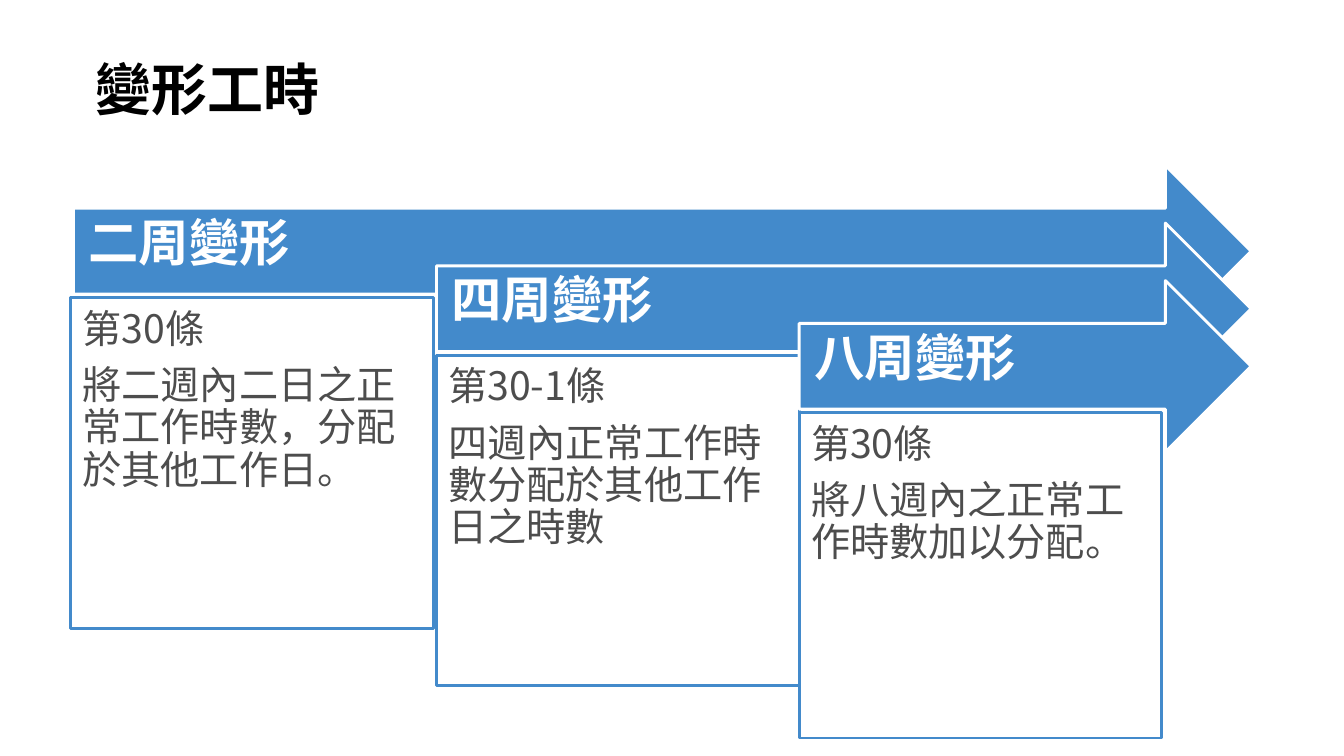
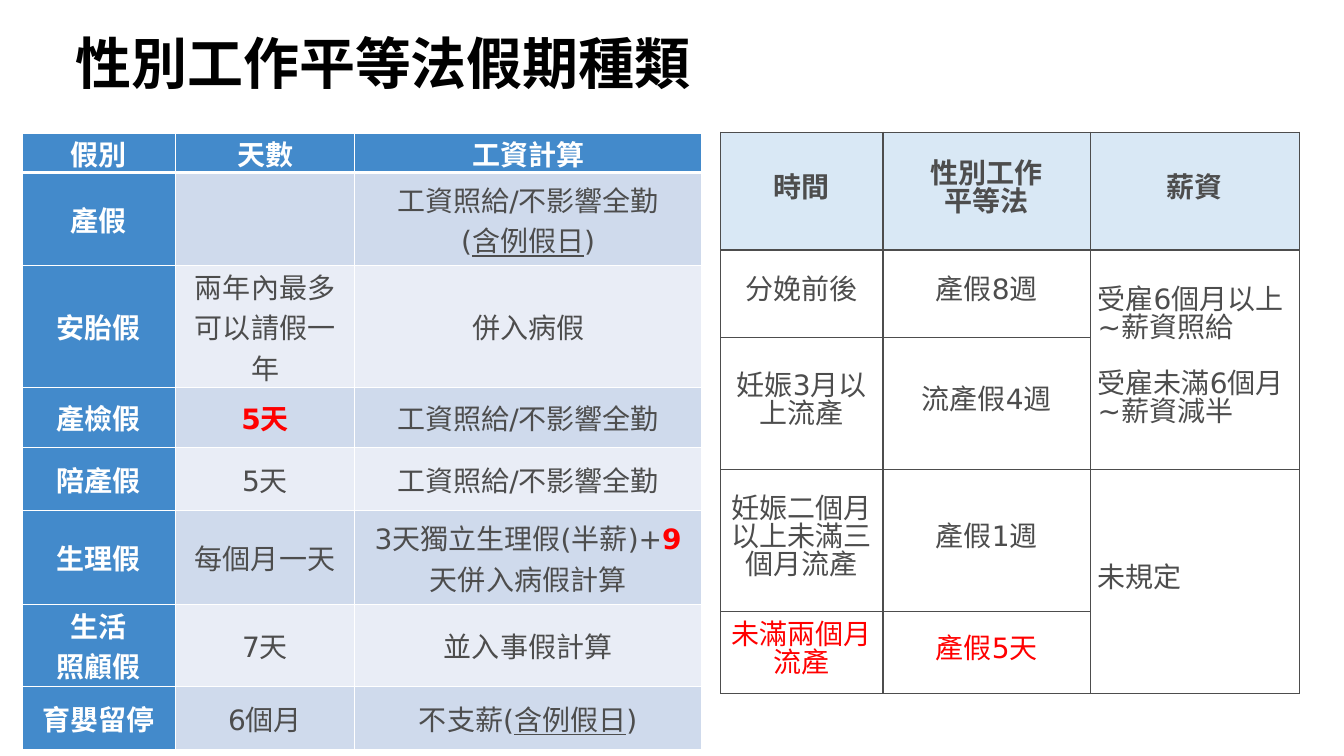
import dataclasses
import typing

import lxml.etree
import pptx
import pptx.dml.color
import pptx.enum.shapes
import pptx.enum.text
import pptx.oxml.ns
import pptx.util

Cm = pptx.util.Cm
Pt = pptx.util.Pt
Color = pptx.dml.color.RGBColor
Align = pptx.enum.text.PP_ALIGN
Anchor = pptx.enum.text.MSO_ANCHOR
Shape = pptx.enum.shapes.MSO_SHAPE
qn = pptx.oxml.ns.qn

BLACK = Color(0x00, 0x00, 0x00)
WHITE = Color(0xFF, 0xFF, 0xFF)
GRAY = Color(0x4D, 0x4D, 0x4D)
RED = Color(0xFF, 0x00, 0x00)
BLUE = Color(0x43, 0x8A, 0xCB)
PALE_BLUE = Color(0xD9, 0xE8, 0xF5)
BAND_DARK = Color(0xCF, 0xDA, 0xEC)
BAND_LIGHT = Color(0xE9, 0xED, 0xF6)
CJK_FONT = "Noto Sans CJK SC"
TABLE_FONT = "DejaVu Sans"


@dataclasses.dataclass(frozen=True)
class Style:
    size: int
    color: Color
    bold: bool = False
    font: str = CJK_FONT
    align: Align = Align.LEFT
    line_spacing: typing.Any = None
    gap: float = 0


class Span(typing.NamedTuple):
    text: str
    underline: bool = False


class Emphasis(typing.NamedTuple):
    text: str
    underline: bool = False


class Stage(typing.NamedTuple):
    name: str
    article: str
    rule: str
    arrow_left: float
    panel_left: float
    panel_height: float


TITLE = Style(40, BLACK, True)
ARROW = Style(36, WHITE, True, line_spacing=0.9)
PANEL = Style(28, GRAY, line_spacing=0.9, gap=9.8)
LEAVE_BODY = Style(20, GRAY, font=TABLE_FONT, align=Align.CENTER)
LEAVE_HEAD = dataclasses.replace(LEAVE_BODY, color=WHITE, bold=True)
LEAVE_ALERT = dataclasses.replace(LEAVE_BODY, color=RED, bold=True)
BIRTH_BODY = dataclasses.replace(LEAVE_BODY, line_spacing=Pt(20))
BIRTH_HEAD = dataclasses.replace(BIRTH_BODY, bold=True)
BIRTH_ALERT = dataclasses.replace(BIRTH_BODY, color=RED)
BIRTH_PAY = dataclasses.replace(BIRTH_BODY, align=Align.LEFT, gap=20)

STAGES = (
    Stage("二周變形", "第30條", "將二週內二日之正常工作時數，分配於其他工作日。", 1.85, 1.78, 8.33),
    Stage("四周變形", "第30-1條", "四週內正常工作時數分配於其他工作日之時數", 11, 11, 8.33),
    Stage("八周變形", "第30條", "將八週內之正常工作時數加以分配。", 20.14, 20.14, 8.2),
)
ARROW_TOP, ARROW_HEIGHT, ARROW_RIGHT = 4.17, 4.32, 31.53
STAGE_STEP, PANEL_DROP, PANEL_WIDTH = 1.45, 3.33, 9.14

FULL_PAY = "工資照給/不影響全勤"
HOLIDAYS = Span("含例假日", True)
LEAVES = (
    (["假別"], ["天數"], ["工資計算"]),
    (["產假"], [], [FULL_PAY, (Span("("), HOLIDAYS, Span(")"))]),
    (["安胎假"], ["兩年內最多可以請假一年"], ["併入病假"]),
    (["產檢假"], ["5天"], [FULL_PAY]),
    (["陪產假"], ["5天"], [FULL_PAY]),
    (["生理假"], ["每個月一天"],
     [(Span("3天獨立生理假(半薪)+"), Emphasis("9"), Span("天併入病假計算"))]),
    (["生活", "照顧假"], ["7天"], ["並入事假計算"]),
    (["育嬰留停"], ["6個月"], [(Span("不支薪("), HOLIDAYS, Span(")"))]),
)
LEAVE_COLUMNS = (3.86, 4.52, 8.74)
LEAVE_ROWS = (1, 2.34, 3.08, 1.5, 1.6, 2.36, 2.06, 1.6)
EXAM_ROW = 3

BIRTHS = (
    (["時間"], ["性別工作", "平等法"], ["薪資"]),
    (["分娩前後"], ["產假8週"], ["受雇6個月以上~薪資照給", "受雇未滿6個月~薪資減半"]),
    (["妊娠3月以上流產"], ["流產假4週"], []),
    (["妊娠二個月以上未滿三個月流產"], ["產假1週"], ["未規定"]),
    (["未滿兩個月流產"], ["產假5天"], []),
)
BIRTH_COLUMNS = (4.09, 5.23, 5.26)
BIRTH_ROWS = (2.97, 2.21, 3.33, 3.56, 2.08)


def write(frame, lines: typing.Sequence, style: Style) -> None:
    for index, line in enumerate(lines):
        para = frame.paragraphs[0] if index == 0 else frame.add_paragraph()
        para.alignment = style.align
        if style.line_spacing is not None:
            para.line_spacing = style.line_spacing
        if index and style.gap:
            para.space_before = Pt(style.gap)
        font = para.font
        font.size, font.bold, font.name = Pt(style.size), style.bold, style.font
        font.color.rgb = style.color
        properties = para._p.pPr.find(qn("a:defRPr"))
        east_asian = lxml.etree.SubElement(properties, qn("a:ea"))
        east_asian.set("typeface", CJK_FONT)
        for span in (Span(line),) if isinstance(line, str) else line:
            run = para.add_run()
            run.text = span.text
            if span.underline:
                run.font.underline = True
            if isinstance(span, Emphasis):
                run.font.bold = True
                run.font.color.rgb = RED


def set_margins(frame, left: float, top: float, right: float, bottom: float) -> None:
    frame.margin_left, frame.margin_top = Cm(left), Cm(top)
    frame.margin_right, frame.margin_bottom = Cm(right), Cm(bottom)


def add_page(deck, title: str, left: float, top: float):
    page = deck.slides.add_slide(deck.slide_layouts[6])
    frame = page.shapes.add_textbox(Cm(left), Cm(top), Cm(28.52), Cm(2.21)).text_frame
    frame.word_wrap = True
    frame.vertical_anchor = Anchor.MIDDLE
    set_margins(frame, 0.15, 0.15, 0.25, 0.15)
    write(frame, [title], TITLE)
    return page


def add_box(page, kind: Shape, left: float, top: float, width: float, height: float,
            fill: Color, line: Color):
    box = page.shapes.add_shape(kind, Cm(left), Cm(top), Cm(width), Cm(height))
    box.shadow.inherit = False
    box.fill.solid()
    box.fill.fore_color.rgb = fill
    box.line.color.rgb = line
    box.line.width = Pt(2)
    box.text_frame.word_wrap = True
    return box


def add_stage(page, stage: Stage, top: float) -> None:
    arrow = add_box(page, Shape.RIGHT_ARROW, stage.arrow_left, top,
                    ARROW_RIGHT - stage.arrow_left, ARROW_HEIGHT, BLUE, WHITE)
    arrow.text_frame.vertical_anchor = Anchor.MIDDLE
    set_margins(arrow.text_frame, 0.38, 0.38, 0.71, 0.69)
    write(arrow.text_frame, [stage.name], ARROW)
    panel = add_box(page, Shape.RECTANGLE, stage.panel_left, top + PANEL_DROP,
                    PANEL_WIDTH, stage.panel_height, WHITE, BLUE)
    panel.text_frame.vertical_anchor = Anchor.TOP
    set_margins(panel.text_frame, 0.3, 0.3, 0.3, 0.3)
    write(panel.text_frame, [stage.article, stage.rule], PANEL)


def set_borders(cell, color: Color, top: float = 1, bottom: float = 1) -> None:
    properties = cell._tc.get_or_add_tcPr()
    sides = (("L", 1), ("R", 1), ("T", top), ("B", bottom))
    for index, (side, width) in enumerate(sides):
        border = lxml.etree.Element(qn(f"a:ln{side}"), w=str(Pt(width)))
        fill = lxml.etree.SubElement(border, qn("a:solidFill"))
        lxml.etree.SubElement(fill, qn("a:srgbClr"), val=str(color))
        properties.insert(index, border)


def add_grid(page, left: float, top: float, columns: typing.Sequence[float],
             rows: typing.Sequence[float]):
    table = page.shapes.add_table(len(rows), len(columns), Cm(left), Cm(top),
                                  Cm(sum(columns)), Cm(sum(rows))).table
    table.first_row = table.horz_banding = False
    for column, width in zip(table.columns, columns):
        column.width = Cm(width)
    for row, height in zip(table.rows, rows):
        row.height = Cm(height)
    return table


def fill_cell(cell, lines: typing.Sequence, style: Style, fill: Color) -> None:
    cell.fill.solid()
    cell.fill.fore_color.rgb = fill
    cell.vertical_anchor = Anchor.MIDDLE
    set_margins(cell, 0.18, 0, 0.18, 0)
    write(cell.text_frame, lines, style)


def add_leave_table(page) -> None:
    table = add_grid(page, 0.56, 3.35, LEAVE_COLUMNS, LEAVE_ROWS)
    for r, row in enumerate(LEAVES):
        band = BAND_DARK if r % 2 else BAND_LIGHT
        for c, lines in enumerate(row):
            heading = r == 0 or c == 0
            style = LEAVE_HEAD if heading else LEAVE_BODY
            if (r, c) == (EXAM_ROW, 1):
                style = LEAVE_ALERT
            cell = table.cell(r, c)
            fill_cell(cell, lines, style, BLUE if heading else band)
            set_borders(cell, WHITE, 3 if r == 1 else 1, 3 if r == 0 else 1)


def add_birth_table(page) -> None:
    table = add_grid(page, 18.16, 3.33, BIRTH_COLUMNS, BIRTH_ROWS)
    for r, row in enumerate(BIRTHS):
        for c, lines in enumerate(row):
            style = BIRTH_PAY if c == 2 else BIRTH_BODY
            if r == 0:
                style = BIRTH_HEAD
            elif r == len(BIRTHS) - 1:
                style = BIRTH_ALERT
            cell = table.cell(r, c)
            fill_cell(cell, lines, style, WHITE if r else PALE_BLUE)
            set_borders(cell, GRAY)
    for first in (1, 3):
        table.cell(first, 2).merge(table.cell(first + 1, 2))


def main() -> None:
    deck = pptx.Presentation()
    deck.slide_width, deck.slide_height = Cm(33.87), Cm(19.05)
    hours_page = add_page(deck, "變形工時", 2.26, 1.12)
    for index, stage in enumerate(STAGES):
        add_stage(hours_page, stage, ARROW_TOP + index * STAGE_STEP)
    leave_page = add_page(deck, "性別工作平等法假期種類", 1.75, 0.46)
    add_leave_table(leave_page)
    add_birth_table(leave_page)
    deck.save("out.pptx")


if __name__ == "__main__":
    main()
